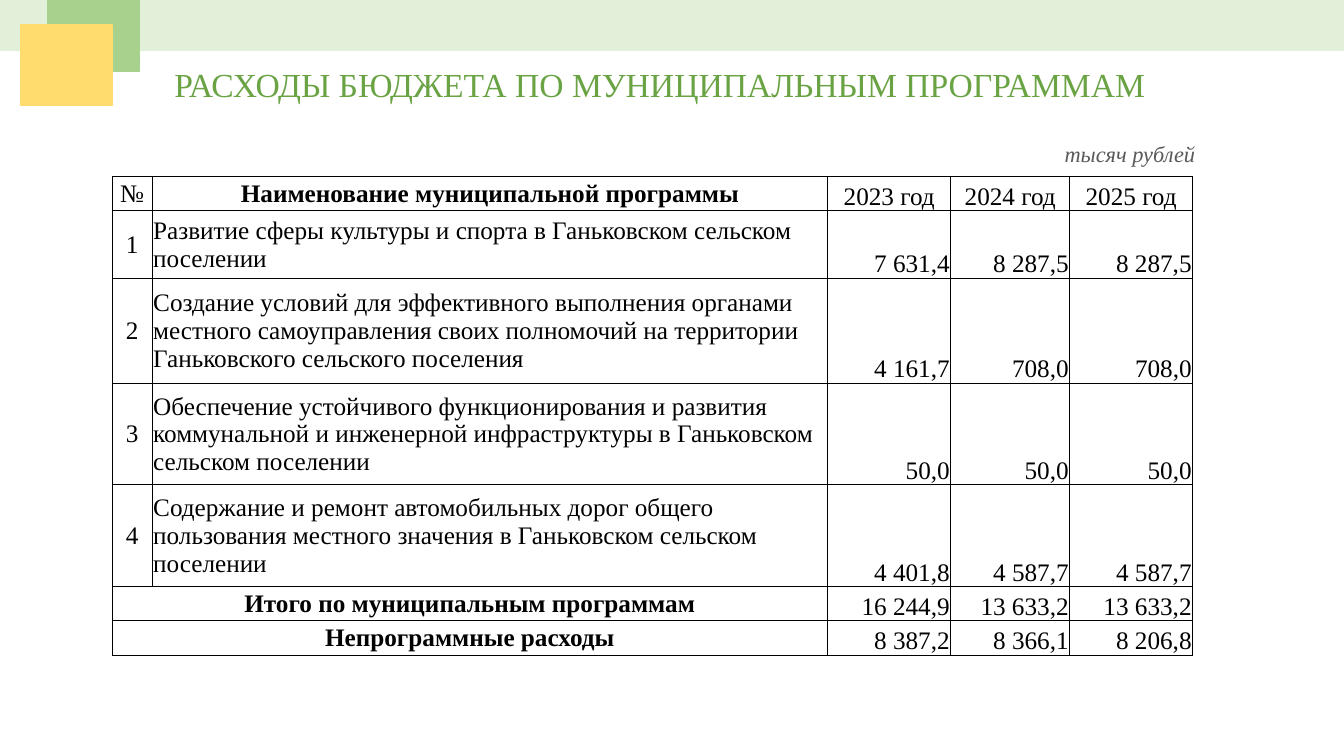
from dataclasses import dataclass

import pptx
import pptx.dml.color
import pptx.enum.shapes
import pptx.enum.text
import pptx.oxml
import pptx.oxml.ns
import pptx.util

Inches = pptx.util.Inches
Pt = pptx.util.Pt
RGBColor = pptx.dml.color.RGBColor
Align = pptx.enum.text.PP_ALIGN
Anchor = pptx.enum.text.MSO_ANCHOR

FONT = "Times New Roman"
BLACK = RGBColor(0x00, 0x00, 0x00)
WHITE = RGBColor(0xFF, 0xFF, 0xFF)
GRAY = RGBColor(0x59, 0x59, 0x59)
GREEN = RGBColor(0x6A, 0xA3, 0x43)
PALE = RGBColor(0xE2, 0xF0, 0xD9)
LEAF = RGBColor(0xA9, 0xD1, 0x8E)
GOLD = RGBColor(0xFF, 0xDC, 0x6D)


@dataclass
class Block:
    left: float
    top: float
    width: float
    height: float
    color: RGBColor


@dataclass
class Entry:
    number: str
    name: str
    sums: tuple[str, str, str]
    height: float
    bold: bool = False
    filled: bool = True
    head: bool = False


BLOCKS = [
    Block(0, 0, 13.33, 0.5, PALE),
    Block(0.47, 0, 0.91, 0.71, LEAF),
    Block(0.21, 0.25, 0.9, 0.8, GOLD),
]
WIDTHS = [0.4, 6.7, 1.22, 1.18, 1.22]
ENTRIES = [
    Entry("№", "Наименование муниципальной программы",
          ("2023 год", "2024 год", "2025 год"), 0.34,
          bold=True, filled=False, head=True),
    Entry("1", "Развитие сферы культуры и спорта в Ганьковском сельском поселении",
          ("7 631,4", "8 287,5", "8 287,5"), 0.67),
    Entry("2", "Создание условий для эффективного выполнения органами местного "
          "самоуправления своих полномочий на территории Ганьковского сельского поселения",
          ("4 161,7", "708,0", "708,0"), 1.04),
    Entry("3", "Обеспечение устойчивого функционирования и развития коммунальной "
          "и инженерной инфраструктуры в Ганьковском сельском поселении",
          ("50,0", "50,0", "50,0"), 1.01),
    Entry("4", "Содержание и ремонт автомобильных дорог общего пользования "
          "местного значения в Ганьковском сельском поселении",
          ("4 401,8", "4 587,7", "4 587,7"), 1.01),
    Entry("", "Итого по муниципальным программам",
          ("16 244,9", "13 633,2", "13 633,2"), 0.34, bold=True),
    Entry("", "Непрограммные расходы",
          ("8 387,2", "8 366,1", "8 206,8"), 0.34, bold=True, filled=False),
]


def write(frame, text: str, size: float, color: RGBColor, align: Align,
          bold: bool = False, italic: bool = False) -> None:
    frame.text = text
    line = frame.paragraphs[0]
    line.alignment = align
    font = line.runs[0].font
    font.name, font.size, font.bold, font.italic = FONT, Pt(size), bold, italic
    font.color.rgb = color


def place(shape, left: float, top: float, width: float, height: float) -> None:
    shape.left, shape.top = Inches(left), Inches(top)
    shape.width, shape.height = Inches(width), Inches(height)


def draw_block(slide, block: Block) -> None:
    shape = slide.shapes.add_shape(
        pptx.enum.shapes.MSO_SHAPE.RECTANGLE, Inches(block.left), Inches(block.top),
        Inches(block.width), Inches(block.height))
    shape.shadow.inherit = False
    shape.fill.solid()
    shape.fill.fore_color.rgb = block.color
    shape.line.color.rgb = block.color
    shape.line.width = Pt(1)


def add_edges(cell) -> None:
    props = cell._tc.get_or_add_tcPr()
    for side in ("lnL", "lnR", "lnT", "lnB"):
        props.append(pptx.oxml.parse_xml(
            f'<a:{side} {pptx.oxml.ns.nsdecls("a")} w="{Pt(0.5)}">'
            f'<a:solidFill><a:srgbClr val="{BLACK}"/></a:solidFill></a:{side}>'))


def fill_cell(cell, text: str, align: Align, anchor: Anchor,
              bold: bool = False, filled: bool = False) -> None:
    write(cell.text_frame, text, 18, BLACK, align, bold)
    cell.vertical_anchor = anchor
    if filled:
        cell.fill.solid()
        cell.fill.fore_color.rgb = WHITE


def draw_table(slide) -> None:
    frame = slide.shapes.add_table(
        len(ENTRIES), len(WIDTHS), Inches(1.11), Inches(1.75),
        Inches(sum(WIDTHS)), Inches(sum(entry.height for entry in ENTRIES)))
    table = frame.table
    table.first_row = table.horz_banding = False
    for column, width in zip(table.columns, WIDTHS):
        column.width = Inches(width)
    for cell in table.iter_cells():
        cell.margin_left = cell.margin_right = cell.margin_top = Inches(0.01)
        cell.margin_bottom = 0
        add_edges(cell)
        cell.fill.background()
    for index, entry in enumerate(ENTRIES):
        table.rows[index].height = Inches(entry.height)
        first, name = table.cell(index, 0), table.cell(index, 1)
        if entry.number:
            fill_cell(first, entry.number, Align.CENTER, Anchor.MIDDLE)
        else:
            first.merge(name)
            name = first
        fill_cell(name, entry.name, Align.CENTER if entry.bold else Align.LEFT,
                  Anchor.MIDDLE, entry.bold, entry.filled)
        for column, value in enumerate(entry.sums, 2):
            fill_cell(table.cell(index, column), value,
                      Align.CENTER if entry.head else Align.RIGHT, Anchor.BOTTOM)


def main() -> None:
    deck = pptx.Presentation()
    deck.slide_width, deck.slide_height = Inches(13.33), Inches(7.5)
    slide = deck.slides.add_slide(deck.slide_layouts.get_by_name("Title Only"))

    title = slide.shapes.title
    place(title, 1.63, 0.58, 9.93, 0.5)
    write(title.text_frame, "РАСХОДЫ БЮДЖЕТА ПО МУНИЦИПАЛЬНЫМ ПРОГРАММАМ",
          24, GREEN, Align.LEFT)
    title.text_frame.vertical_anchor = Anchor.TOP

    unit = slide.shapes.add_textbox(
        Inches(10.46), Inches(1.34), Inches(1.52), Inches(0.37))
    write(unit.text_frame, "тысяч рублей", 16, GRAY, Align.LEFT, italic=True)
    for frame in (title.text_frame, unit.text_frame):
        frame.word_wrap = False
        frame.auto_size = pptx.enum.text.MSO_AUTO_SIZE.SHAPE_TO_FIT_TEXT

    for block in BLOCKS:
        draw_block(slide, block)
    draw_table(slide)
    deck.save("out.pptx")


if __name__ == "__main__":
    main()
